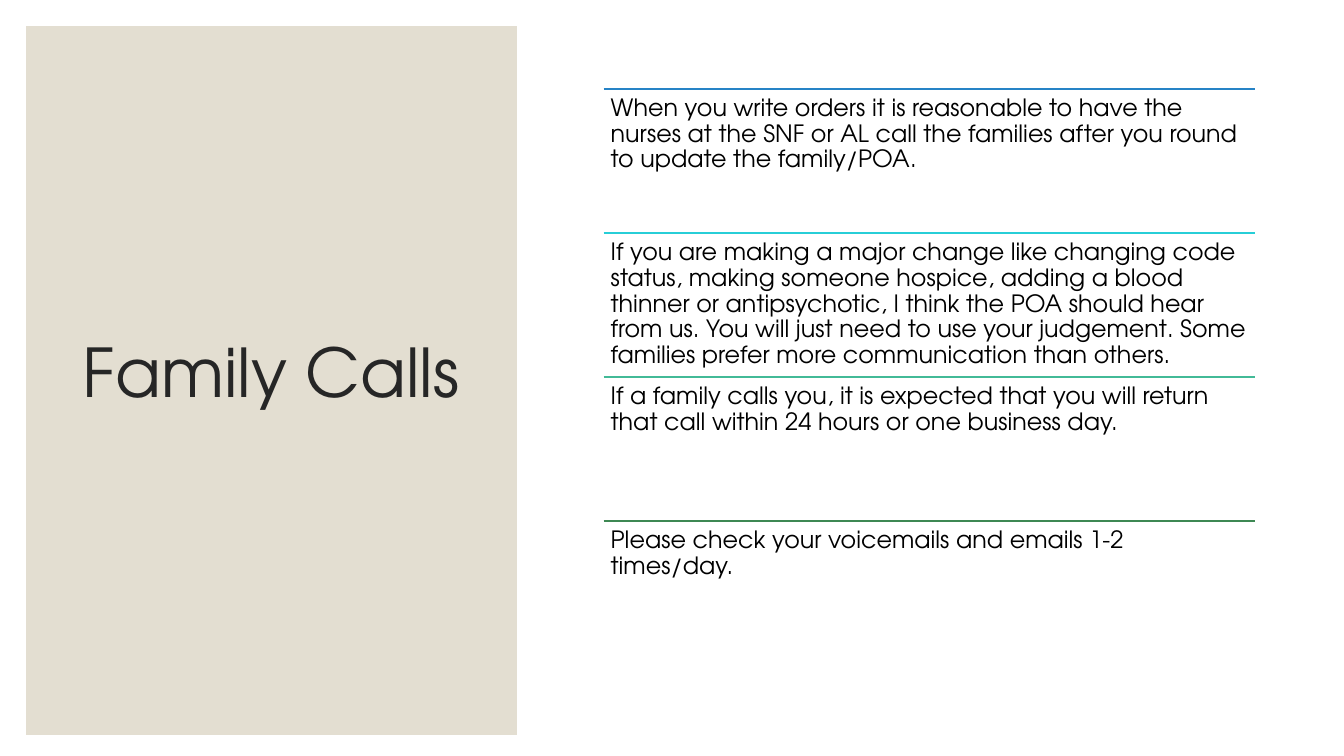
from pptx import Presentation
from pptx.dml.color import RGBColor
from pptx.enum.shapes import MSO_CONNECTOR, MSO_SHAPE
from pptx.enum.text import MSO_ANCHOR, MSO_AUTO_SIZE, PP_ALIGN
from pptx.oxml.ns import qn
from pptx.util import Cm, Pt
from lxml.etree import SubElement

COLORS = {
    "panel": "E3DED1",
    "title": "262626",
    "body": "000000",
    "blue": "2683C6",
    "cyan": "27CED7",
    "teal": "42BA97",
    "green": "3E8853",
}
FONT = "TeX Gyre Adventor"

GUIDELINES = [
    ("blue", "When you write orders it is reasonable to have the nurses at the SNF "
             "or AL call the families after you round to update the family/POA."),
    ("cyan", "If you are making a major change like changing code status, making "
             "someone hospice, adding a blood thinner or antipsychotic, I think the "
             "POA should hear from us. You will just need to use your judgement. "
             "Some families prefer more communication than others."),
    ("teal", "If a family calls you, it is expected that you will return that call "
             "within 24 hours or one business day."),
    ("green", "Please check your voicemails and emails 1-2 times/day."),
]


def color(name):
    return RGBColor.from_string(COLORS[name])


def format_paragraph(paragraph, size, color_name, alignment):
    paragraph.alignment = alignment
    paragraph.line_spacing = 0.9
    paragraph.font.name = FONT
    paragraph.font.size = Pt(size)
    paragraph.font.color.rgb = color(color_name)


presentation = Presentation()
presentation.slide_width = Cm(33.87)
presentation.slide_height = Cm(19.05)
slide = presentation.slides.add_slide(presentation.slide_layouts[5])

# Side panel
panel = slide.shapes.add_shape(MSO_SHAPE.RECTANGLE, Cm(0.66), Cm(0.66), Cm(12.37), Cm(17.86))
panel.shadow.inherit = False
panel.fill.solid()
panel.fill.fore_color.rgb = color("panel")
panel.line.fill.background()

# Title, in front of the panel
title = slide.shapes.title
panel.element.addnext(title.element)
title.left, title.top, title.width, title.height = Cm(1.6), Cm(1.55), Cm(10.46), Cm(15.85)
title.text_frame.text = "Family Calls"
title.text_frame.word_wrap = True
title.text_frame.auto_size = MSO_AUTO_SIZE.NONE
title.text_frame.vertical_anchor = MSO_ANCHOR.MIDDLE
format_paragraph(title.text_frame.paragraphs[0], 48, "title", PP_ALIGN.CENTER)

# Guidelines, each under a coloured rule
left, first_top = Cm(15.21), Cm(2.24)
width, row_height = Cm(16.41), Cm(3.63)
inset = Cm(0.18)
for row, (rule_color, text) in enumerate(GUIDELINES):
    top = first_top + row * row_height
    rule = slide.shapes.add_connector(MSO_CONNECTOR.STRAIGHT, left, top, left + width, top)
    rule.line.color.rgb = color(rule_color)
    rule.line.width = Pt(1)
    SubElement(rule.element.spPr, qn("a:effectLst"))

    text_box = slide.shapes.add_textbox(left, top, width, row_height)
    frame = text_box.text_frame
    frame.word_wrap = True
    frame.margin_left = frame.margin_right = inset
    frame.margin_top = frame.margin_bottom = inset
    frame.text = text
    format_paragraph(frame.paragraphs[0], 17, "body", PP_ALIGN.LEFT)

presentation.save("out.pptx")
